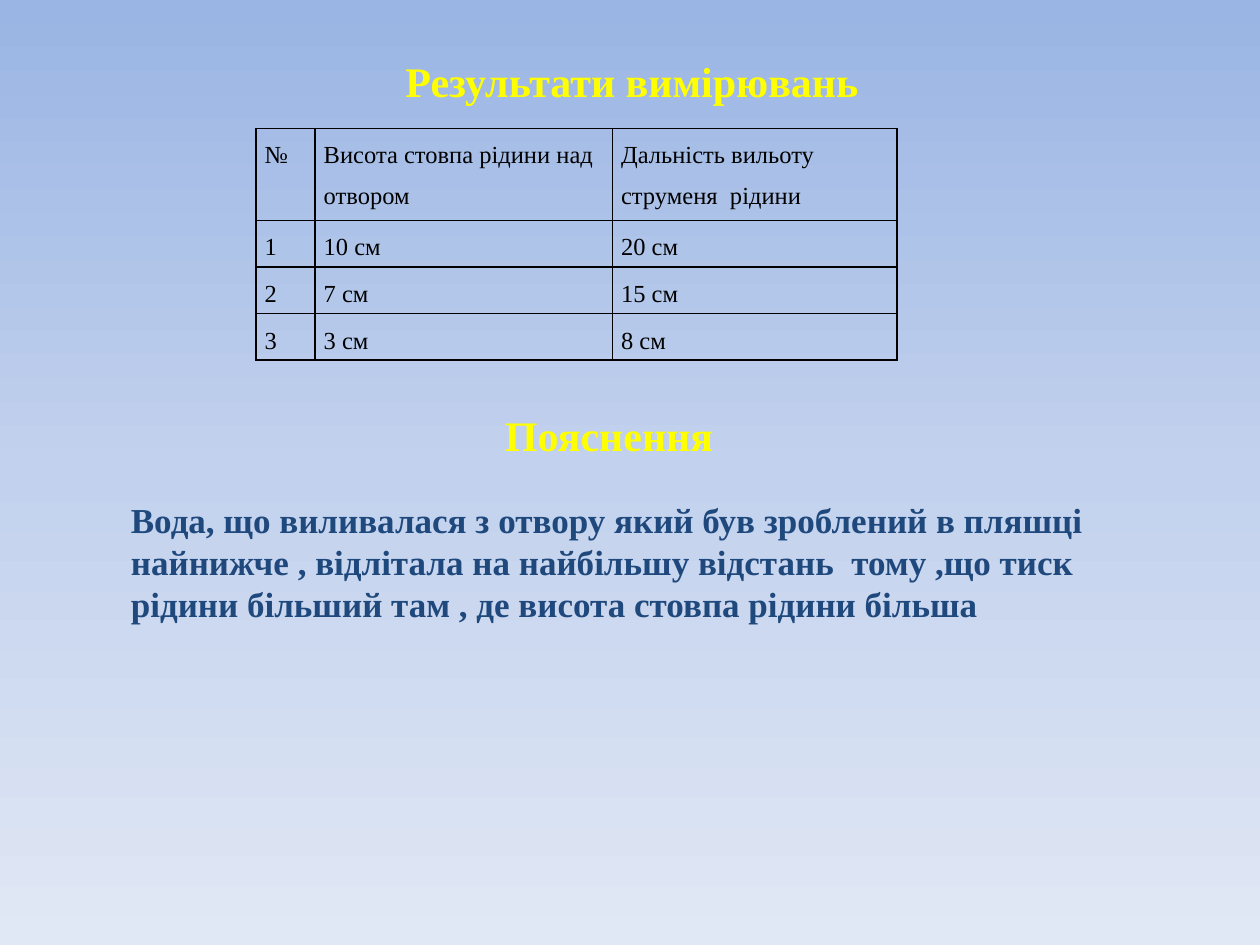
import copy
from dataclasses import dataclass

import pptx
import pptx.dml.color
import pptx.oxml
import pptx.oxml.ns
import pptx.util
from pptx.util import Inches


@dataclass(frozen=True)
class Theme:
    font: str = "Times New Roman"
    heading_color: str = "FFFF00"
    body_color: str = "1F497D"
    table_color: str = "000000"
    gradient: tuple = ((0, "9AB5E4"), (0.5, "C2D1ED"), (1, "E1E8F5"))
    heading_size: int = 24
    body_size: int = 20
    table_size: int = 14
    border_width: int = 1


THEME = Theme()
RESULTS = [
    ["№", "Висота стовпа рідини над отвором", "Дальність вильоту струменя  рідини"],
    ["1", "10 см", "20 см"],
    ["2", "7 см", "15 см"],
    ["3", "3 см", "8 см"],
]
EXPLANATION = [
    "Вода, що виливалася з отвору який був зроблений в пляшці",
    "найнижче , відлітала на найбільшу відстань  тому ,що тиск",
    "рідини більший там , де висота стовпа рідини більша",
]


def rgb(value):
    return pptx.dml.color.RGBColor.from_string(value)


def write_text(text_frame, lines, *, size, color, bold=False, line_spacing=None):
    for index, line in enumerate(lines):
        paragraph = text_frame.paragraphs[0] if index == 0 else text_frame.add_paragraph()
        paragraph.line_spacing = line_spacing
        run = paragraph.add_run()
        run.text = line
        run.font.name = THEME.font
        run.font.size = pptx.util.Pt(size)
        run.font.bold = bold
        run.font.color.rgb = rgb(color)


def paint_background(slide):
    fill = slide.background.fill
    fill.gradient()
    fill.gradient_angle = 270
    # A new gradient has two stops; add the middle one
    stop_list = slide.element.find(".//" + pptx.oxml.ns.qn("a:gsLst"))
    stop_list.insert(1, copy.deepcopy(stop_list[0]))
    for stop, (position, color) in zip(fill.gradient_stops, THEME.gradient):
        stop.position = position
        stop.color.rgb = rgb(color)


def add_text(slide, box, lines, **text_format):
    shape = slide.shapes.add_textbox(*map(Inches, box))
    shape.text_frame.word_wrap = False
    write_text(shape.text_frame, lines, bold=True, **text_format)


def add_heading(slide, box, text):
    add_text(slide, box, [text], size=THEME.heading_size, color=THEME.heading_color)


def set_borders(cell):
    properties = cell._tc.get_or_add_tcPr()
    width = pptx.util.Pt(THEME.border_width)
    for position, side in enumerate(("lnL", "lnR", "lnT", "lnB")):
        properties.insert(position, pptx.oxml.parse_xml(
            f'<a:{side} {pptx.oxml.ns.nsdecls("a")} w="{width}"><a:solidFill>'
            f'<a:srgbClr val="{THEME.table_color}"/></a:solidFill></a:{side}>'))


def add_results_table(slide, box, column_widths, row_heights):
    frame = slide.shapes.add_table(len(RESULTS), len(RESULTS[0]), *map(Inches, box))
    table = frame.table
    table.first_row = table.horz_banding = False
    for column, width in zip(table.columns, column_widths):
        column.width = Inches(width)
    for row, height, values in zip(table.rows, row_heights, RESULTS):
        row.height = Inches(height)
        for cell, value in zip(row.cells, values):
            cell.margin_left = cell.margin_right = Inches(0.07)
            cell.margin_top = cell.margin_bottom = 0
            cell.fill.background()
            set_borders(cell)
            write_text(cell.text_frame, [value], size=THEME.table_size,
                       color=THEME.table_color, line_spacing=1.5)


def main():
    presentation = pptx.Presentation()
    presentation.slide_width = Inches(10)
    presentation.slide_height = Inches(7.5)
    slide = presentation.slides.add_slide(presentation.slide_layouts[6])
    paint_background(slide)

    # Measurement results
    add_results_table(slide, (2.03, 1.02, 5.1, 1.83),
                      (0.47, 2.36, 2.26), (0.73, 0.37, 0.37, 0.37))
    add_heading(slide, (3.12, 0.39, 3.84, 0.5), "Результати вимірювань")

    # Explanation
    add_heading(slide, (3.91, 3.2, 1.87, 0.5), "Пояснення")
    add_text(slide, (0.94, 3.91, 7.88, 1.11), EXPLANATION,
             size=THEME.body_size, color=THEME.body_color)

    presentation.save("out.pptx")


if __name__ == "__main__":
    main()
